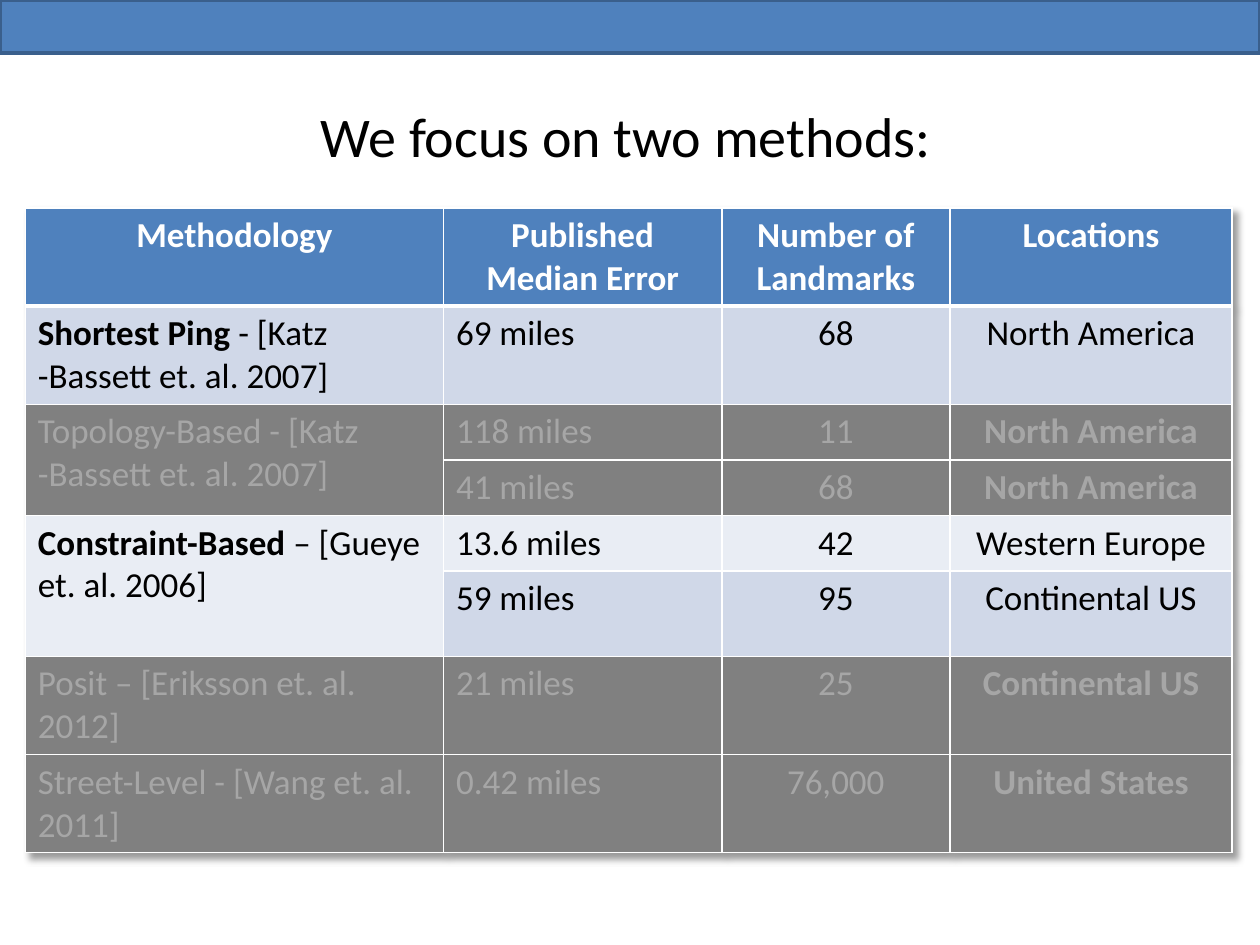
"""Build a slide that compares location methods in one table."""
from dataclasses import dataclass

from lxml.etree import SubElement as Sub
from pptx import Presentation
from pptx.dml.color import RGBColor as Rgb
from pptx.enum.shapes import MSO_SHAPE as Shape
from pptx.enum.text import MSO_ANCHOR as Anchor, PP_ALIGN as Align
from pptx.oxml import parse_xml
from pptx.oxml.ns import nsdecls, qn
from pptx.util import Cm, Pt


@dataclass(frozen=True)
class Theme:
    font: str = "Calibri"
    head: int = 32
    body: int = 20
    blue: str = "4F81BD"
    edge: str = "3A5F8C"
    white: str = "FFFFFF"
    black: str = "000000"
    mid: str = "D0D8E8"
    pale: str = "E9EDF4"
    dark: str = "808080"
    dim: str = "A6A6A6"


T = Theme()
WIDTHS = (8.43, 5.61, 4.6, 5.69)
HEIGHTS = (1.98, 1.98, 1.12, 1.12, 1.12, 1.72, 1.98, 1.98)
HEADS = ("Methodology", "Published Median Error", "Number of Landmarks", "Locations")
ROWS = (
    (T.mid, ("Shortest Ping", " - [Katz -Bassett et. al. 2007]"),
     "69 miles", "68", "North America"),
    (T.dark, ("", "Topology-Based - [Katz -Bassett et. al. 2007]"),
     "118 miles", "11", "North America"),
    (T.dark, None, "41 miles", "68", "North America"),
    (T.pale, ("Constraint-Based", " – [Gueye et. al. 2006]"),
     "13.6 miles", "42", "Western Europe"),
    (T.mid, None, "59 miles", "95", "Continental US"),
    (T.dark, ("", "Posit – [Eriksson et. al. 2012]"),
     "21 miles", "25", "Continental US"),
    (T.dark, ("", "Street-Level - [Wang et. al. 2011]"),
     "0.42 miles", "76,000", "United States"),
)


def add_run(para, text, size, color, bold=False):
    run = para.add_run()
    run.text = text
    font = run.font
    font.name, font.size, font.bold = T.font, Pt(size), bold
    font.color.rgb = Rgb.from_string(color)


def add_bar(slide, width):
    bar = slide.shapes.add_shape(Shape.RECTANGLE, 0, 0, width, Cm(1.07))
    bar.shadow.inherit = False
    bar.fill.solid()
    bar.fill.fore_color.rgb = Rgb.from_string(T.blue)
    bar.line.color.rgb = Rgb.from_string(T.edge)
    bar.line.width = Pt(2)


def add_title(slide, text):
    box = slide.shapes.add_textbox(Cm(1.19), Cm(1.14), Cm(22.86), Cm(3.18))
    frame = box.text_frame
    frame.word_wrap = True
    frame.vertical_anchor = Anchor.MIDDLE
    para = frame.paragraphs[0]
    para.alignment = Align.CENTER
    add_run(para, text, T.head, T.black)


def set_edges(cell, top, base):
    props = cell._tc.get_or_add_tcPr()
    sides = (("L", 1), ("R", 1), ("T", top), ("B", base))
    for spot, (side, width) in enumerate(sides):
        line = Sub(props, qn(f"a:ln{side}"), w=str(Pt(width)))
        fill = Sub(line, qn("a:solidFill"))
        Sub(fill, qn("a:srgbClr"), val=T.white)
        props.insert(spot, line)


def fill_cell(cell, runs, fill, color, align=Align.LEFT, top=1, base=1):
    cell.fill.solid()
    cell.fill.fore_color.rgb = Rgb.from_string(fill)
    set_edges(cell, top, base)
    para = cell.text_frame.paragraphs[0]
    para.alignment = align
    for text, bold in runs:
        if text:
            add_run(para, text, T.body, color, bold)


def add_shade(table):
    shade = parse_xml(
        f'<a:effectLst {nsdecls("a")}><a:outerShdw blurRad="50800" dist="50800"'
        ' dir="2700000" algn="tl" rotWithShape="0"><a:srgbClr val="000000">'
        '<a:alpha val="40000"/></a:srgbClr></a:outerShdw></a:effectLst>')
    table._tbl.tblPr.insert(0, shade)


def add_grid(slide):
    frame = slide.shapes.add_table(len(HEIGHTS), len(WIDTHS), Cm(0.51), Cm(4.19),
                                   Cm(sum(WIDTHS)), Cm(sum(HEIGHTS)))
    table = frame.table
    add_shade(table)
    for col, width in zip(table.columns, WIDTHS):
        col.width = Cm(width)
    for row, height in zip(table.rows, HEIGHTS):
        row.height = Cm(height)
    for col, text in enumerate(HEADS):
        fill_cell(table.cell(0, col), [(text, True)], T.blue, T.white,
                  Align.CENTER, base=3)
    for row, (fill, name, error, count, place) in enumerate(ROWS, 1):
        faint = fill == T.dark
        color = T.dim if faint else T.black
        top = 3 if row == 1 else 1
        runs = zip(name or (), (True, False))
        fill_cell(table.cell(row, 0), runs, fill, color, top=top)
        fill_cell(table.cell(row, 1), [(error, False)], fill, color, top=top)
        for col, text, bold in ((2, count, False), (3, place, faint)):
            fill_cell(table.cell(row, col), [(text, bold)], fill, color,
                      Align.CENTER, top)
        if name is None:
            table.cell(row - 1, 0).merge(table.cell(row, 0))


def main():
    deck = Presentation()
    deck.slide_width, deck.slide_height = Cm(25.4), Cm(19.05)
    slide = deck.slides.add_slide(deck.slide_layouts[6])
    add_bar(slide, deck.slide_width)
    add_title(slide, "We focus on two methods:")
    add_grid(slide)
    deck.save("out.pptx")


if __name__ == "__main__":
    main()
